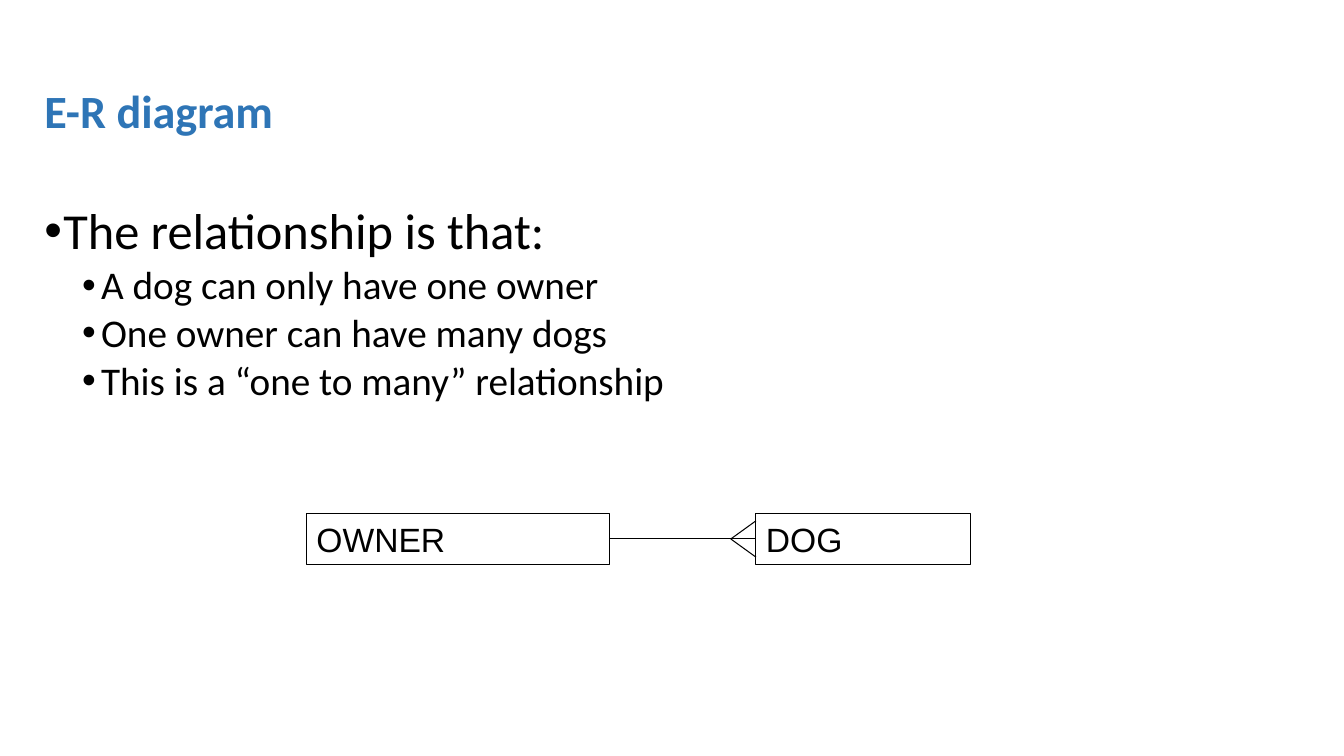
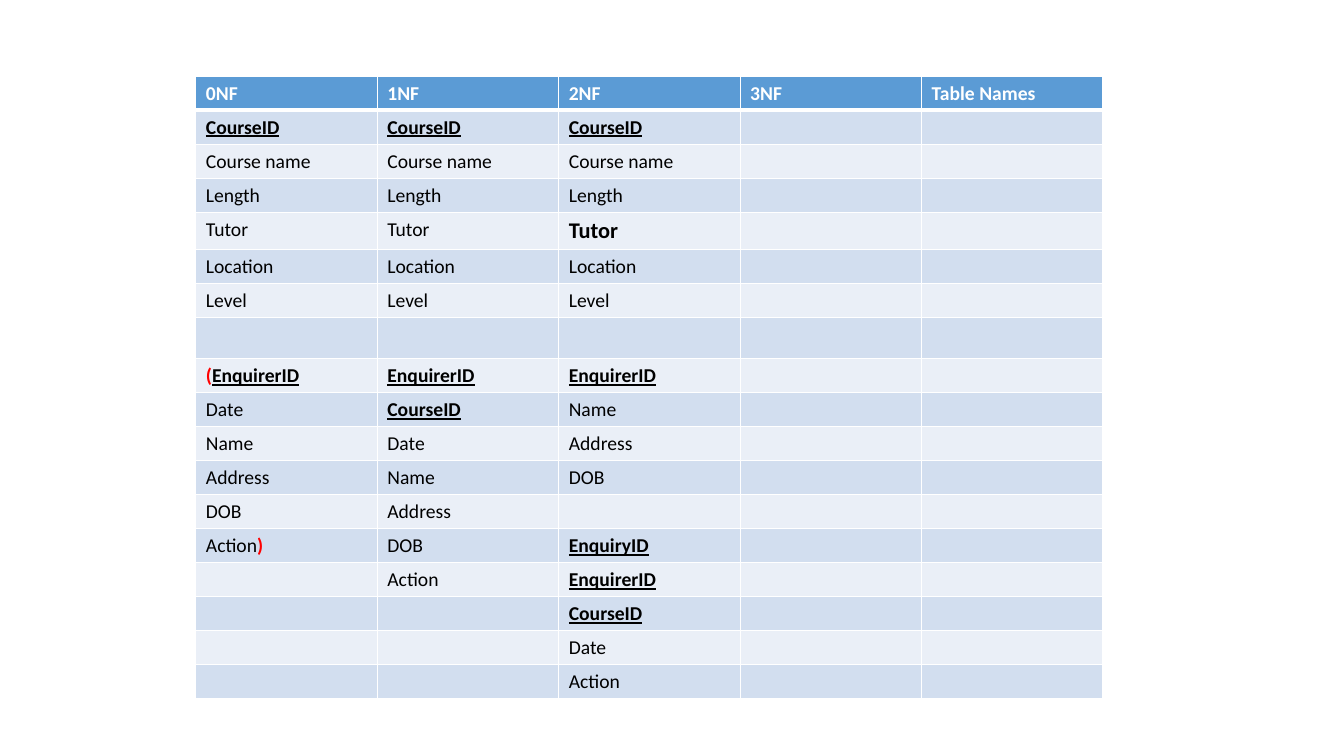
from dataclasses import dataclass
from itertools import zip_longest

from lxml.etree import SubElement
from pptx import Presentation
from pptx.dml.color import RGBColor
from pptx.enum.shapes import MSO_CONNECTOR, MSO_SHAPE
from pptx.enum.text import MSO_ANCHOR, MSO_AUTO_SIZE, PP_ALIGN
from pptx.oxml.ns import qn
from pptx.util import Pt


@dataclass(frozen=True)
class Theme:
    text_font: str = "Calibri"
    diagram_font: str = "Arial"
    black: str = "000000"
    white: str = "FFFFFF"
    red: str = "FF0000"
    title_blue: str = "2E75B6"
    header_blue: str = "5B9BD5"
    bands: tuple = ("D2DEEF", "EAEFF7")
    title_size: int = 33
    body_sizes: tuple = (36, 28)
    diagram_size: int = 24
    cell_size: int = 14
    large_cell_size: int = 16
    gap_size: int = 18
    thin_line: float = 0.75
    cell_border: int = 1
    header_border: int = 3


THEME = Theme()
SLIDE_WIDTH, SLIDE_HEIGHT = 960, 540

TITLE = "E-R diagram"
TITLE_BOX = (24.5, 28.8, 913, 104.4)
BODY_BOX = (24.5, 143.6, 913, 388.8)
BULLETS = [
    (0, "The relationship is that:"),
    (1, "A dog can only have one owner"),
    (1, "One owner can have many dogs"),
    (1, "This is a “one to many” relationship"),
]
BULLET_INDENT = 13.5
LEVEL_MARGINS = (13.5, 40.5)
LEVEL_SPACES = (7.5, 3.8)

ENTITY_TOP, ENTITY_HEIGHT = 367, 36
ENTITIES = [("OWNER", 219, 216.4), ("DOG", 540, 153)]
CROW_FOOT_LENGTH, CROW_FOOT_SPREAD = 18, 13

HEADERS = ["0NF", "1NF", "2NF", "3NF", "Table Names"]
KEYS = {"CourseID", "EnquirerID", "EnquiryID"}
BRACKETS = {"(", ")"}
LARGE_BOLD_CELLS = {("2NF", "Tutor")}
COURSE = ["CourseID", "Course name", "Length", "Tutor", "Location", "Level", ""]
COLUMNS = [
    COURSE + [("(", "EnquirerID"), "Date", "Name", "Address", "DOB", ("Action", ")")],
    COURSE + ["EnquirerID", "CourseID", "Date", "Name", "Address", "DOB", "Action"],
    COURSE + ["EnquirerID", "Name", "Address", "DOB", "",
              "EnquiryID", "EnquirerID", "CourseID", "Date", "Action"],
    [],
    [],
]
TABLE_LEFT, TABLE_TOP = 139.9, 54.5
COLUMN_WIDTH, ROW_HEIGHT = 129.6, 24.3


def write(paragraph, text, *, size, color=THEME.black, font=THEME.text_font,
          bold=False, underline=False):
    """Add a run; empty text only sets the height of the empty line."""
    if not text:
        SubElement(paragraph._p, qn("a:endParaRPr"), sz=str(size * 100))
        return
    run = paragraph.add_run()
    run.text = text
    run.font.name = font
    run.font.size = Pt(size)
    run.font.bold = bold
    run.font.underline = underline
    run.font.color.rgb = RGBColor.from_string(color)


def place(shape, box):
    shape.left, shape.top, shape.width, shape.height = map(Pt, box)


def style_line(shape):
    shape.line.color.rgb = RGBColor.from_string(THEME.black)
    shape.line.width = Pt(THEME.thin_line)


def add_bullet(paragraph, level):
    paragraph.level = level
    properties = paragraph._p.get_or_add_pPr()
    properties.set("marL", str(Pt(LEVEL_MARGINS[level])))
    properties.set("indent", str(-Pt(BULLET_INDENT)))
    SubElement(properties, qn("a:buFont"), typeface="Arial")
    SubElement(properties, qn("a:buChar"), char="•")


def fill_title(shape):
    place(shape, TITLE_BOX)
    frame = shape.text_frame
    frame.auto_size = MSO_AUTO_SIZE.NONE
    frame.vertical_anchor = MSO_ANCHOR.MIDDLE
    paragraph = frame.paragraphs[0]
    paragraph.alignment = PP_ALIGN.LEFT
    paragraph.line_spacing = 0.9
    write(paragraph, TITLE, size=THEME.title_size, color=THEME.title_blue, bold=True)


def fill_body(shape):
    place(shape, BODY_BOX)
    frame = shape.text_frame
    frame.auto_size = MSO_AUTO_SIZE.NONE
    for index, (level, text) in enumerate(BULLETS):
        paragraph = frame.add_paragraph() if index else frame.paragraphs[0]
        add_bullet(paragraph, level)
        paragraph.line_spacing = 0.9
        paragraph.space_before = Pt(LEVEL_SPACES[level] if index else 0)
        write(paragraph, text, size=THEME.body_sizes[level])


def add_entity(slide, name, left, width):
    shape = slide.shapes.add_shape(
        MSO_SHAPE.RECTANGLE, Pt(left), Pt(ENTITY_TOP), Pt(width), Pt(ENTITY_HEIGHT))
    shape.shadow.inherit = False
    shape.fill.background()
    style_line(shape)
    frame = shape.text_frame
    frame.word_wrap = True
    frame.vertical_anchor = MSO_ANCHOR.TOP
    paragraph = frame.paragraphs[0]
    paragraph.alignment = PP_ALIGN.LEFT
    write(paragraph, name, size=THEME.diagram_size, font=THEME.diagram_font)
    return shape


def add_line(slide, start, end):
    line = slide.shapes.add_connector(MSO_CONNECTOR.STRAIGHT, *map(Pt, start + end))
    style_line(line)
    SubElement(line._element.spPr, qn("a:effectLst"))
    return line


def add_relationship(slide):
    """Draw both entities and the one-to-many line with its crow's foot."""
    owner, dog = [add_entity(slide, *entity) for entity in ENTITIES]
    owner_right = ENTITIES[0][1] + ENTITIES[0][2]
    dog_left = ENTITIES[1][1]
    middle = ENTITY_TOP + ENTITY_HEIGHT / 2
    link = add_line(slide, (owner_right, middle), (dog_left, middle))
    link.begin_connect(owner, 3)
    link.end_connect(dog, 1)
    for spread in (-CROW_FOOT_SPREAD, CROW_FOOT_SPREAD):
        add_line(slide, (dog_left - CROW_FOOT_LENGTH, middle), (dog_left, middle + spread))


def style_cell(cell, row):
    """Set white borders, thicker below the header, and the band colour."""
    properties = cell._tc.get_or_add_tcPr()
    header_edges = {(0, "lnB"), (1, "lnT")}
    for edge in ("lnL", "lnR", "lnT", "lnB"):
        width = THEME.header_border if (row, edge) in header_edges else THEME.cell_border
        border = SubElement(properties, qn(f"a:{edge}"), w=str(Pt(width)))
        fill = SubElement(border, qn("a:solidFill"))
        SubElement(fill, qn("a:srgbClr"), val=THEME.white)
    cell.fill.solid()
    color = THEME.bands[(row - 1) % 2] if row else THEME.header_blue
    cell.fill.fore_color.rgb = RGBColor.from_string(color)


def write_attribute(paragraph, header, content, empty_size):
    large = (header, content) in LARGE_BOLD_CELLS
    text_size = THEME.large_cell_size if large else THEME.cell_size
    for text in (content,) if isinstance(content, str) else content:
        write(paragraph, text,
              size=text_size if text else empty_size,
              color=THEME.red if text in BRACKETS else THEME.black,
              bold=large or text in KEYS | BRACKETS,
              underline=text in KEYS)


def add_normalisation_table(slide):
    rows = list(zip_longest(*COLUMNS, fillvalue=""))
    table = slide.shapes.add_table(
        len(rows) + 1, len(HEADERS), Pt(TABLE_LEFT), Pt(TABLE_TOP),
        Pt(COLUMN_WIDTH * len(HEADERS)), Pt(ROW_HEIGHT * (len(rows) + 1))).table
    for column in table.columns:
        column.width = Pt(COLUMN_WIDTH)
    for row_index, row in enumerate([HEADERS] + rows):
        table.rows[row_index].height = Pt(ROW_HEIGHT)
        empty_size = THEME.cell_size if any(row) else THEME.gap_size
        for column_index, (header, content) in enumerate(zip(HEADERS, row)):
            cell = table.cell(row_index, column_index)
            style_cell(cell, row_index)
            paragraph = cell.text_frame.paragraphs[0]
            if row_index == 0:
                write(paragraph, header, size=THEME.cell_size, color=THEME.white, bold=True)
            else:
                write_attribute(paragraph, header, content, empty_size)


def main():
    presentation = Presentation()
    presentation.slide_width = Pt(SLIDE_WIDTH)
    presentation.slide_height = Pt(SLIDE_HEIGHT)
    layouts = presentation.slide_layouts

    diagram_slide = presentation.slides.add_slide(layouts.get_by_name("Title and Content"))
    fill_title(diagram_slide.shapes.title)
    fill_body(diagram_slide.placeholders[1])
    add_relationship(diagram_slide)

    table_slide = presentation.slides.add_slide(layouts.get_by_name("Blank"))
    add_normalisation_table(table_slide)

    presentation.save("out.pptx")


if __name__ == "__main__":
    main()
